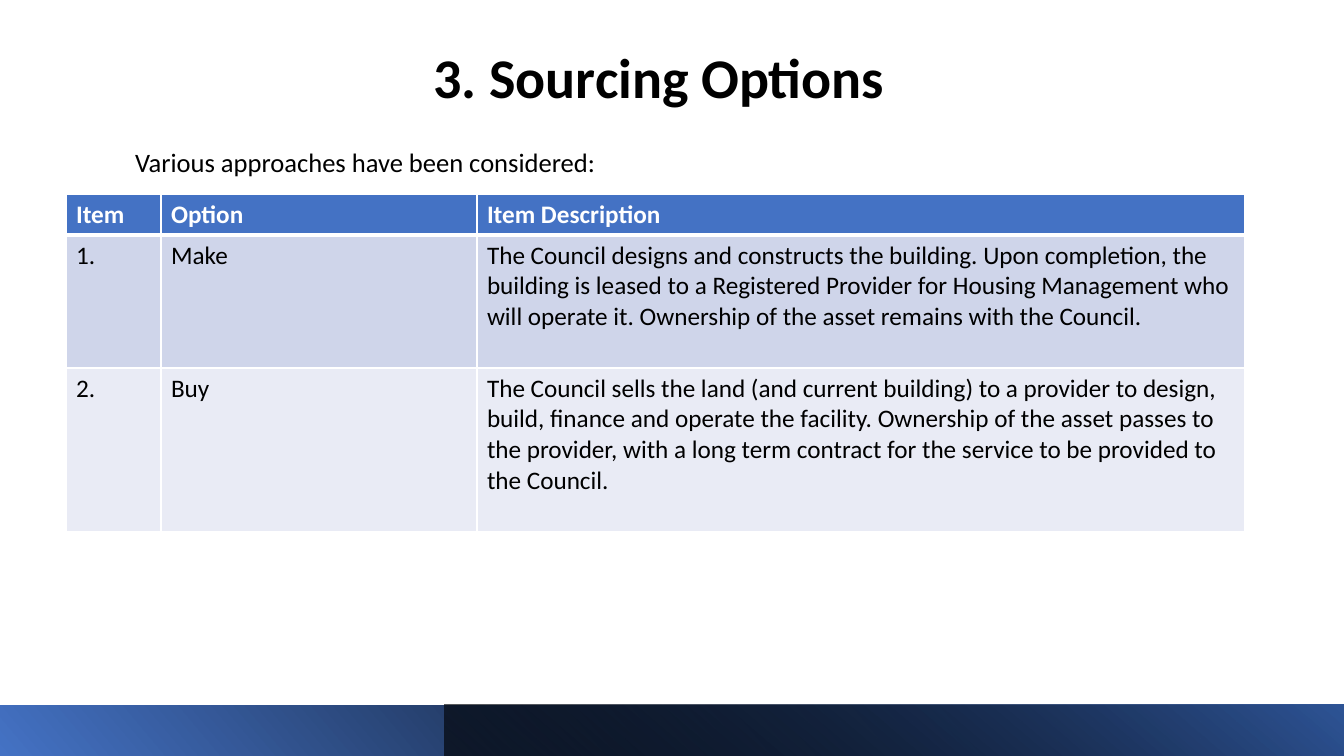
"""Build the Sourcing Options slide with its table of approaches."""
from lxml.etree import SubElement
from pptx import Presentation
from pptx.dml.color import RGBColor
from pptx.enum.shapes import MSO_SHAPE as Shape
from pptx.enum.text import MSO_ANCHOR as Anchor, MSO_AUTO_SIZE as AutoSize, PP_ALIGN as Align
from pptx.oxml import parse_xml
from pptx.oxml.ns import nsdecls, qn
from pptx.util import Emu, Pt

COLORS = {
    "black": "000000", "white": "FFFFFF", "blue": "4472C4", "navy": "2F5597",
    "odd": "CFD5EA", "even": "E9EBF5",
}
FONT = "Calibri"


def px(count):
    return Emu(round(count * 914400 / 100.8))


def style(para, size, color, bold=False):
    para.font.name = FONT
    para.font.size = Pt(size)
    para.font.bold = bold
    para.font.color.rgb = RGBColor.from_string(COLORS[color])


deck = Presentation()
deck.slide_width, deck.slide_height = px(1344), px(756)
page = deck.slides.add_slide(deck.slide_layouts[1])

title, body = page.placeholders
title.left, title.top, title.width, title.height = px(125), px(0), px(1068), px(181)
title.text_frame.text = "3. Sourcing Options"
title.text_frame.vertical_anchor = Anchor.BOTTOM
title.text_frame.margin_bottom = px(70)
heading = title.text_frame.paragraphs[0]
heading.alignment = Align.CENTER
heading.line_spacing = 0.9
style(heading, 40, "black", True)

body.left, body.top, body.width, body.height = px(125), px(144), px(1120), px(528)
body.text_frame.text = "Various approaches have been considered:"
body.text_frame.vertical_anchor = Anchor.TOP
intro = body.text_frame.paragraphs[0]
intro.line_spacing = 0.9
intro.space_before = Pt(10)
style(intro, 19, "black")
intro_format = intro._p.get_or_add_pPr()
intro_format.set("marL", "0")
intro_format.set("indent", "0")
bullet = SubElement(intro_format, qn("a:buNone"))
for box in (title, body):
    box.text_frame.auto_size = AutoSize.NONE

BARS = [
    (0, 1344, 180, 320, [(0, "blue", 100), (0.78, "black", 100)]),
    (445, 899, 0, 130, [(0, "black", 63), (1, "navy", 100)]),
]
for left, width, rotation, angle, stops in BARS:
    bar = page.shapes.add_shape(Shape.RECTANGLE, px(left), px(705), px(width), px(51))
    bar.shadow.inherit = False
    bar.rotation = rotation
    bar._element.spPr.xfrm.set("flipH", "1")
    bar.line.fill.background()
    bar.fill.gradient()
    bar.fill.gradient_angle = angle
    for stop, (position, color, opacity) in zip(bar.fill.gradient_stops, stops):
        stop.position = position
        stop.color.rgb = RGBColor.from_string(COLORS[color])
        if opacity < 100:
            color_node = stop._gs.find(qn("a:srgbClr"))
            SubElement(color_node, qn("a:alpha")).set("val", str(opacity * 1000))

ROWS = [
    ("Item", "Option", "Item Description"),
    ("1.", "Make", "The Council designs and constructs the building. Upon completion, the building is "
     "leased to a Registered Provider for Housing Management who will operate it. Ownership of the "
     "asset remains with the Council."),
    ("2.", "Buy", "The Council sells the land (and current building) to a provider to design, build, "
     "finance and operate the facility. Ownership of the asset passes to the provider, with a long "
     "term contract for the service to be provided to the Council."),
]
COLUMN_WIDTHS = [95, 316, 768]
ROW_HEIGHTS = [41, 133, 164]
ROW_FILLS = ["blue", "odd", "even"]

table = page.shapes.add_table(
    len(ROWS), len(COLUMN_WIDTHS), px(66), px(194), px(sum(COLUMN_WIDTHS)), px(sum(ROW_HEIGHTS))
).table
for column, width in zip(table.columns, COLUMN_WIDTHS):
    column.width = px(width)
for index, (row, height, texts) in enumerate(zip(table.rows, ROW_HEIGHTS, ROWS)):
    row.height = px(height)
    is_header = index == 0
    for cell, text in zip(row.cells, texts):
        cell.text = text
        style(cell.text_frame.paragraphs[0], 18, "white" if is_header else "black", is_header)
        cell.fill.solid()
        cell.fill.fore_color.rgb = RGBColor.from_string(COLORS[ROW_FILLS[index]])
        for order, side in enumerate("LRTB"):
            thick = (is_header and side == "B") or (index == 1 and side == "T")
            border = parse_xml(
                f'<a:ln{side} {nsdecls("a")} w="{Pt(3 if thick else 1)}"><a:solidFill>'
                f'<a:srgbClr val="{COLORS["white"]}"/></a:solidFill></a:ln{side}>'
            )
            cell._tc.get_or_add_tcPr().insert(order, border)

deck.save("out.pptx")
